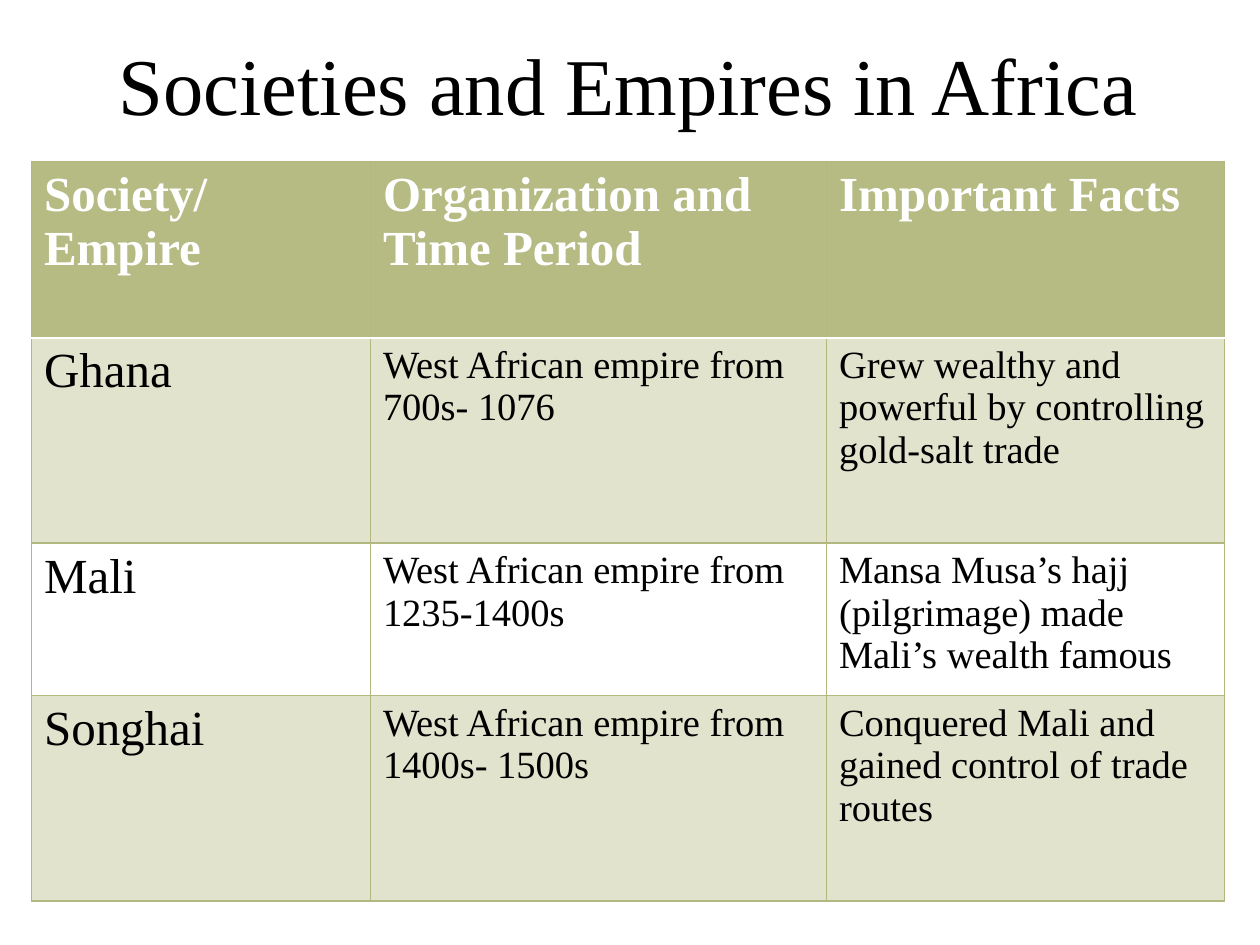
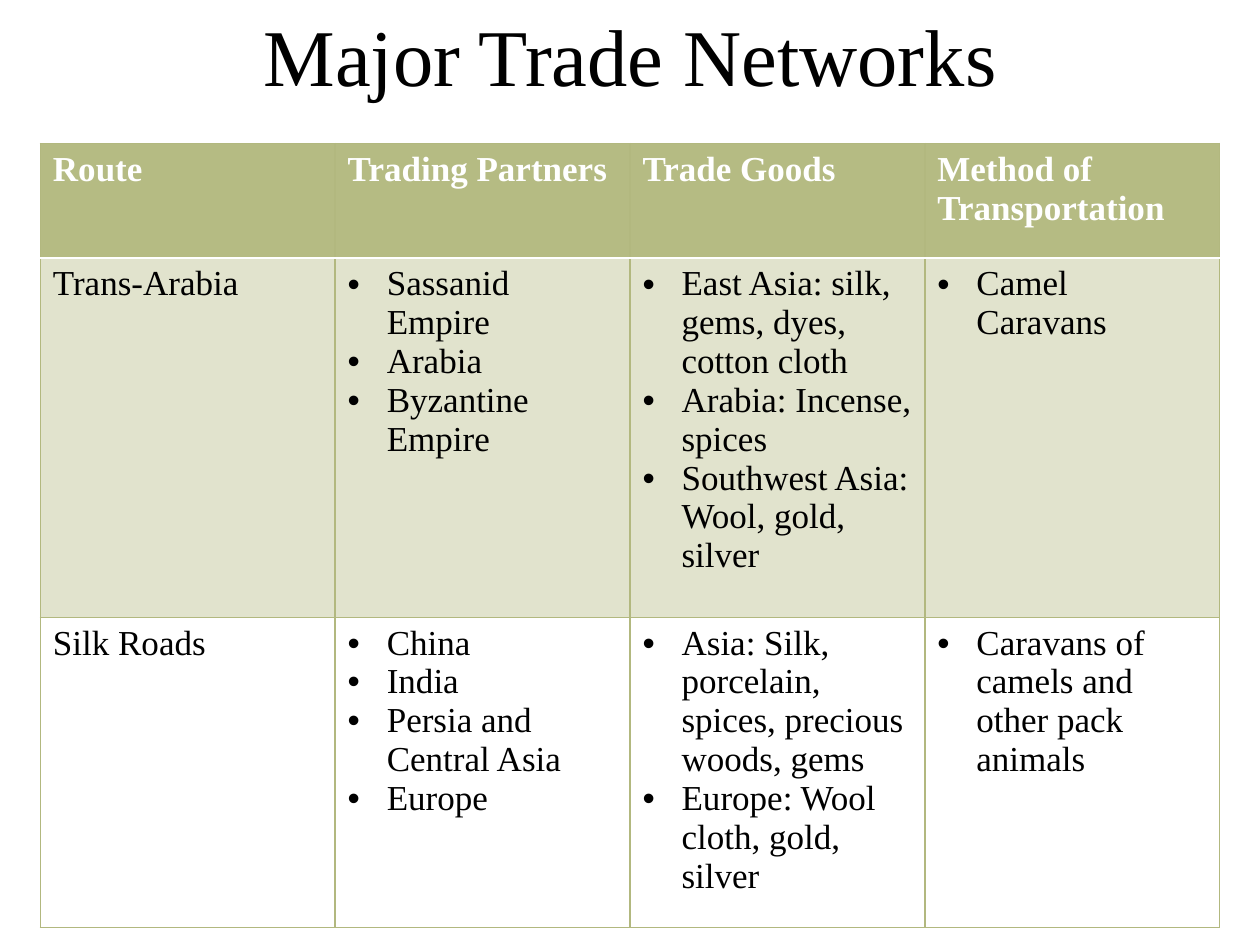
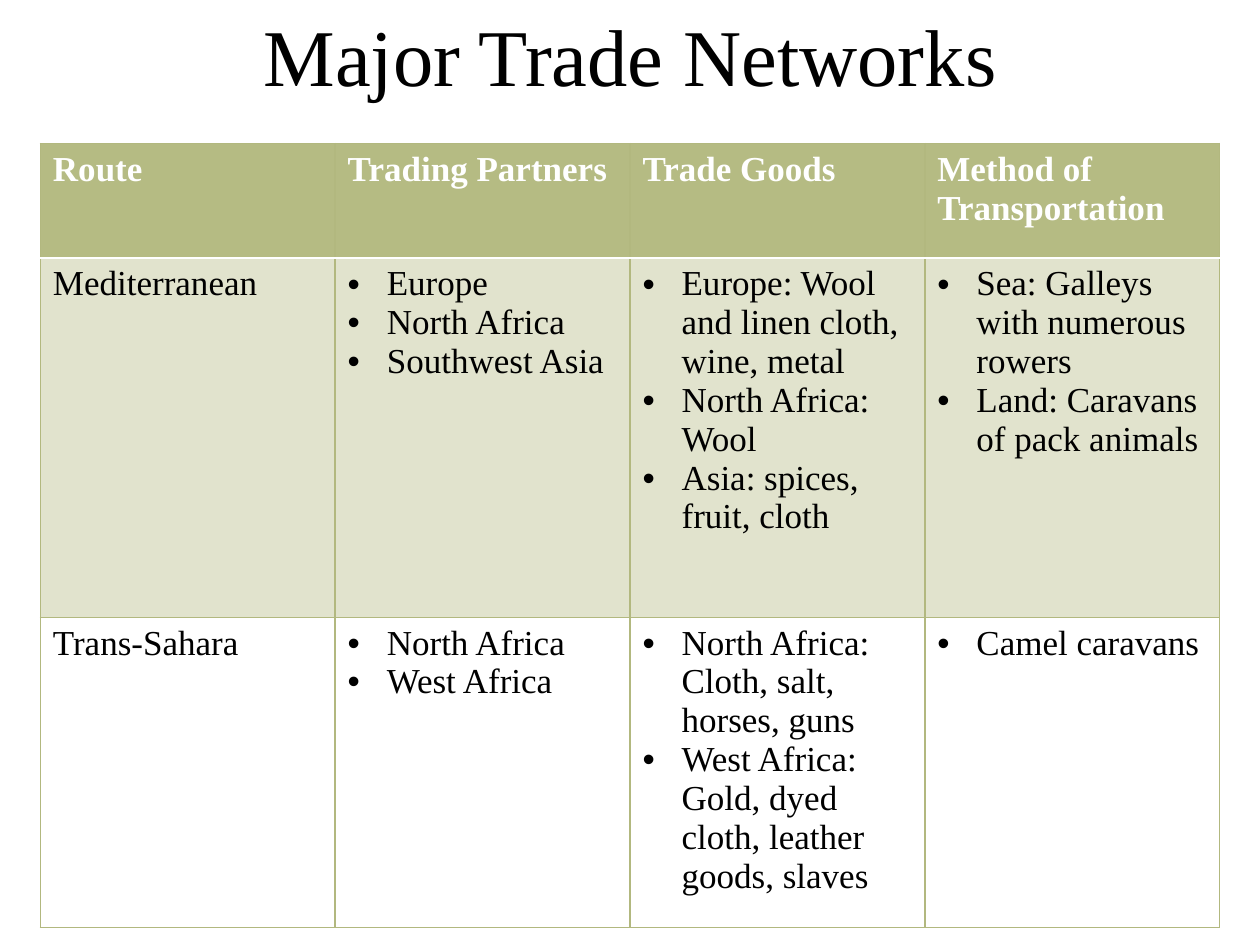
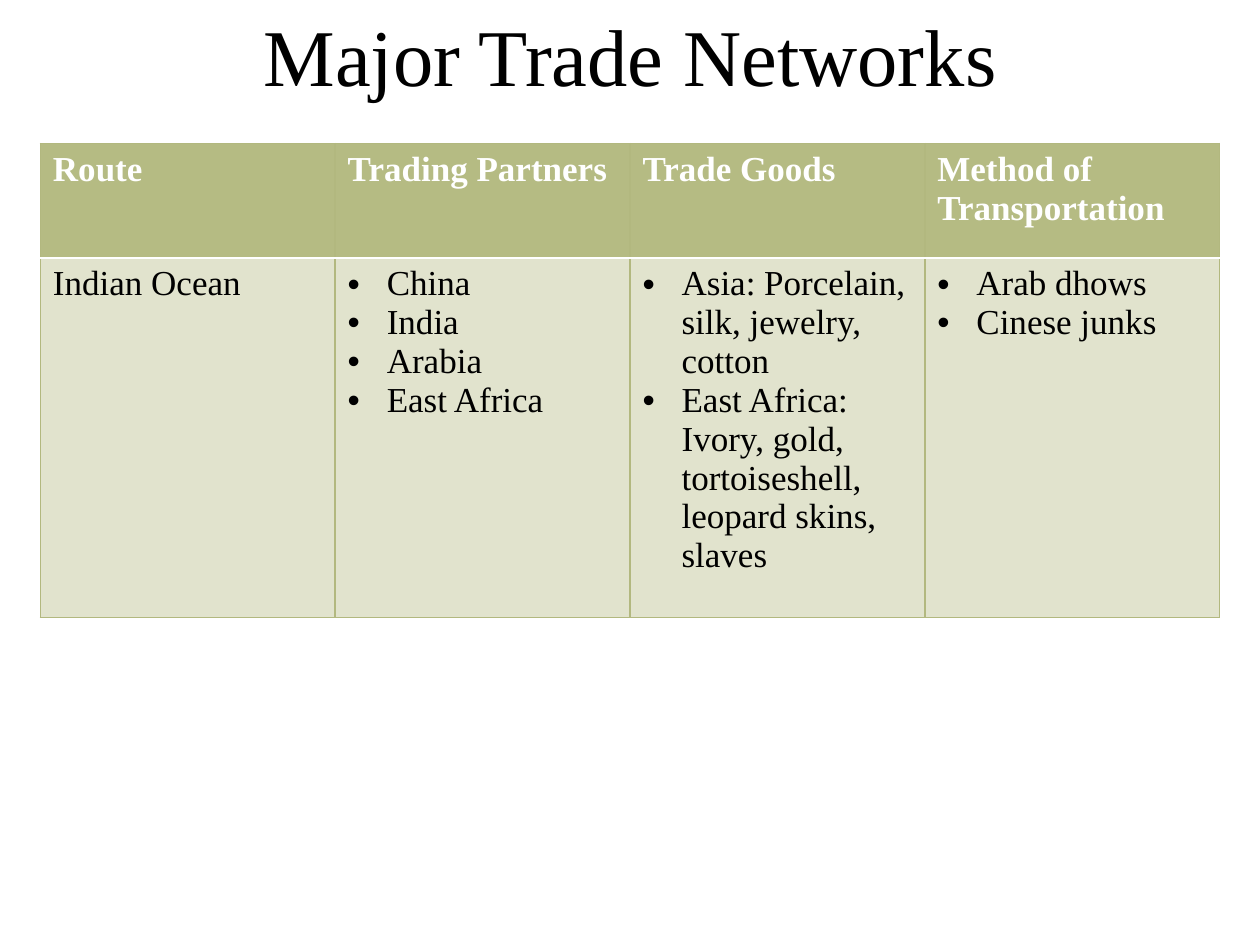
from dataclasses import dataclass
from typing import Union

from lxml.etree import SubElement as Sub
from pptx import Presentation
from pptx.dml.color import RGBColor as RGB
from pptx.enum.text import MSO_ANCHOR as Anchor, MSO_AUTO_SIZE as AutoSize, PP_ALIGN as Align
from pptx.oxml.ns import qn
from pptx.util import Inches, Pt

Content = Union[str, list[str]]  # a list is drawn as bullets


# Theme
@dataclass(frozen=True)
class Theme:
    font: str = "Times New Roman"
    ink: str = "000000"
    white: str = "FFFFFF"
    olive: str = "B5BB83"
    border: str = "B2B87F"
    band_alpha: int = 40
    border_pt: float = 1
    rule_pt: float = 1.5
    title_pt: int = 46
    large_pt: int = 28
    medium_pt: int = 22
    small_pt: int = 20
    indent: float = 0.31


T = Theme()


# Slide descriptions
@dataclass(frozen=True)
class Look:
    title_box: tuple[float, float, float, float]
    left: float
    top: float
    cols: list[float]
    rows: list[float]
    header: list[str]
    label_pt: int
    body_pt: int


@dataclass(frozen=True)
class TableSlide:
    title: str
    look: Look
    body: list[list[Content]]


EMPIRES = Look((0.25, 0.21, 9.47, 0.9), 0.25, 1.28, [2.69, 3.62, 3.16], [1.4, 1.63, 1.21, 1.63],
               ["Society/Empire", "Organization and Time Period", "Important Facts"],
               T.large_pt, T.medium_pt)
TRADE = Look((1, 0.08, 8, 0.7), 0.32, 1.14, [2.34] * 4, [0.91, 2.85, 2.46],
             ["Route", "Trading Partners", "Trade Goods", "Method of Transportation"],
             T.small_pt, T.small_pt)
TRADE_TITLE = "Major Trade Networks"

SLIDES = [
    TableSlide("Societies and Empires in Africa", EMPIRES, [
        ["Ghana", "West African empire from 700s- 1076",
         "Grew wealthy and powerful by controlling gold-salt trade"],
        ["Mali", "West African empire from 1235-1400s",
         "Mansa Musa’s hajj (pilgrimage) made Mali’s wealth famous"],
        ["Songhai", "West African empire from 1400s- 1500s",
         "Conquered Mali and gained control of trade routes"],
    ]),
    TableSlide(TRADE_TITLE, TRADE, [
        ["Trans-Arabia",
         ["Sassanid Empire", "Arabia", "Byzantine Empire"],
         ["East Asia: silk, gems, dyes, cotton cloth", "Arabia: Incense, spices",
          "Southwest Asia: Wool, gold, silver"],
         ["Camel Caravans"]],
        ["Silk Roads",
         ["China", "India", "Persia and Central Asia", "Europe"],
         ["Asia: Silk, porcelain, spices, precious woods, gems",
          "Europe: Wool cloth, gold, silver"],
         ["Caravans of camels and other pack animals"]],
    ]),
    TableSlide(TRADE_TITLE, TRADE, [
        ["Mediterranean",
         ["Europe", "North Africa", "Southwest Asia"],
         ["Europe: Wool and linen cloth, wine, metal", "North Africa: Wool",
          "Asia: spices, fruit, cloth"],
         ["Sea: Galleys with numerous rowers", "Land: Caravans of pack animals"]],
        ["Trans-Sahara",
         ["North Africa", "West Africa"],
         ["North Africa: Cloth, salt, horses, guns",
          "West Africa: Gold, dyed cloth, leather goods, slaves"],
         ["Camel caravans"]],
    ]),
    TableSlide(TRADE_TITLE, TRADE, [
        ["Indian Ocean",
         ["China", "India", "Arabia", "East Africa"],
         ["Asia: Porcelain, silk, jewelry, cotton",
          "East Africa: Ivory, gold, tortoiseshell, leopard skins, slaves"],
         ["Arab dhows", "Cinese junks"]],
    ]),
]


# Text helpers
def style_font(font, size: int, color: str, bold: bool = False) -> None:
    for name, value in {"name": T.font, "size": Pt(size), "bold": bold}.items():
        setattr(font, name, value)
    font.color.rgb = RGB.from_string(color)


def add_bullet(p) -> None:
    pPr = p._p.get_or_add_pPr()
    pPr.set("marL", str(Inches(T.indent)))
    pPr.set("indent", str(-Inches(T.indent)))
    Sub(pPr, qn("a:buFont"), typeface="Arial")
    Sub(pPr, qn("a:buChar"), char="•")


def write_cell(cell, content: Content, size: int, color: str, bold: bool) -> None:
    tf = cell.text_frame
    bulleted = isinstance(content, list)
    for i, line in enumerate(content if bulleted else [content]):
        p = tf.paragraphs[0] if i == 0 else tf.add_paragraph()
        if bulleted:
            add_bullet(p)
        r = p.add_run()
        r.text = line
        style_font(r.font, size, color, bold)


# Cell helpers
def set_borders(cell, row: int) -> None:
    tcPr = cell._tc.get_or_add_tcPr()
    rule_side = {0: "lnB", 1: "lnT"}.get(row)  # white rule under the header
    for side in ("lnL", "lnR", "lnT", "lnB"):
        color, width = (T.white, T.rule_pt) if side == rule_side else (T.border, T.border_pt)
        ln = Sub(tcPr, qn(f"a:{side}"), w=str(Pt(width)))
        Sub(Sub(ln, qn("a:solidFill")), qn("a:srgbClr"), val=color)


def fill_cell(cell, row: int) -> None:
    if row and row % 2 == 0:
        cell.fill.background()
        return
    cell.fill.solid()
    cell.fill.fore_color.rgb = RGB.from_string(T.olive)
    if row:
        clr = cell._tc.tcPr.find(f".//{qn('a:solidFill')}/{qn('a:srgbClr')}[@val='{T.olive}']")
        Sub(clr, qn("a:alpha"), val=str(T.band_alpha * 1000))


# Slide parts
def add_title(s, text: str, box: tuple[float, float, float, float]) -> None:
    sp = s.shapes.title
    for name, value in zip(("left", "top", "width", "height"), box):
        setattr(sp, name, Inches(value))
    tf = sp.text_frame
    tf.text = text
    for name, value in {"vertical_anchor": Anchor.MIDDLE, "word_wrap": True,
                        "auto_size": AutoSize.NONE}.items():
        setattr(tf, name, value)
    p = tf.paragraphs[0]
    p.alignment = Align.CENTER
    style_font(p.runs[0].font, T.title_pt, T.ink)


def add_grid(s, look: Look, body: list[list[Content]]) -> None:
    data = [look.header, *body]
    heights = look.rows[:len(data)]
    table = s.shapes.add_table(len(data), len(look.cols), Inches(look.left), Inches(look.top),
                               Inches(sum(look.cols)), Inches(sum(heights))).table
    table.first_row = table.horz_banding = False
    for column, width in zip(table.columns, look.cols):
        column.width = Inches(width)
    for i, (height, values) in enumerate(zip(heights, data)):
        table.rows[i].height = Inches(height)
        header = i == 0
        for j, content in enumerate(values):
            cell = table.cell(i, j)
            size = look.label_pt if header or j == 0 else look.body_pt
            write_cell(cell, content, size, T.white if header else T.ink, header)
            set_borders(cell, i)
            fill_cell(cell, i)


def main() -> None:
    prs = Presentation()
    prs.slide_width, prs.slide_height = Inches(10), Inches(7.5)
    title_only = prs.slide_layouts[5]
    for spec_slide in SLIDES:
        s = prs.slides.add_slide(title_only)
        add_title(s, spec_slide.title, spec_slide.look.title_box)
        add_grid(s, spec_slide.look, spec_slide.body)
    prs.save("out.pptx")


if __name__ == "__main__":
    main()
